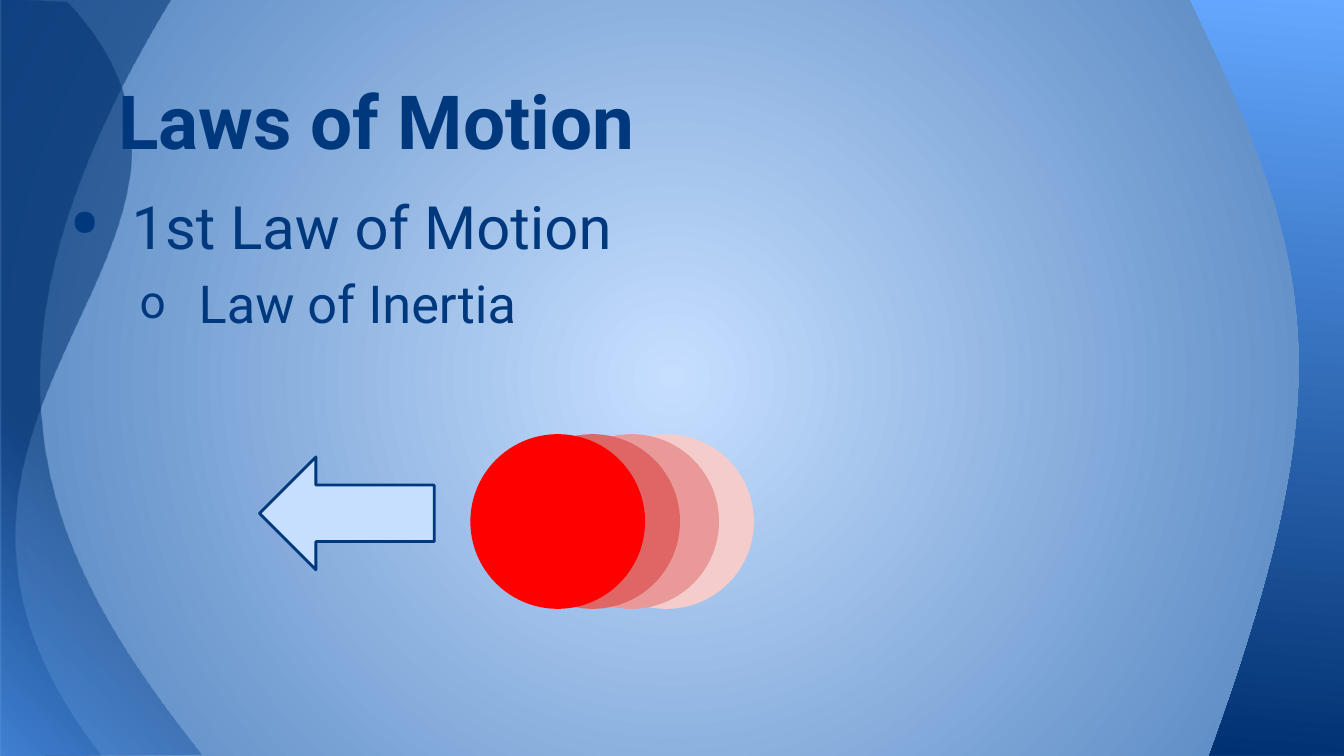
import pptx
import pptx.util
import pptx.dml.color
import pptx.enum.shapes
import pptx.enum.text
import pptx.oxml
import pptx.oxml.ns
from dataclasses import dataclass

Pt = pptx.util.Pt
RGBColor = pptx.dml.color.RGBColor
MSO_SHAPE = pptx.enum.shapes.MSO_SHAPE
qn = pptx.oxml.ns.qn
A = pptx.oxml.ns.nsdecls("a")


@dataclass(frozen=True)
class Theme:
    font: str = "Roboto"
    ink: str = "00387E"
    pale: str = "C6DFFF"
    edge: str = "4F81BD"
    dark: str = "003171"
    bright: str = "549FFF"
    sky: str = "65A8FF"
    balls: tuple = ("F4CCCC", "EA9999", "E06666", "FF0000")
    title_size: int = 40
    body_sizes: tuple = (32, 28)


theme = Theme()


def set_gradient(properties, stops, direction, opacity=100):
    """Replace the solid fill in properties by a gradient."""
    stop_xml = "".join(
        f'<a:gs pos="{position * 1000}"><a:srgbClr val="{color}">'
        f'<a:alpha val="{opacity * 1000}"/></a:srgbClr></a:gs>'
        for position, color in stops)
    gradient = pptx.oxml.parse_xml(
        f'<a:gradFill {A} rotWithShape="1"><a:gsLst>{stop_xml}</a:gsLst>{direction}</a:gradFill>')
    solid = properties.find(qn("a:solidFill"))
    properties.replace(solid, gradient)


def add_text(paragraph, text, size, bold=False):
    run = paragraph.add_run()
    run.text = text
    run.font.name = theme.font
    run.font.size = Pt(size)
    run.font.bold = bold
    run.font.color.rgb = RGBColor.from_string(theme.ink)


presentation = pptx.Presentation()
presentation.slide_width, presentation.slide_height = Pt(720), Pt(405)
slide = presentation.slides.add_slide(presentation.slide_layouts[5])

# Background: glow from the centre
slide.background.fill.solid()
centre = ('<a:path path="circle"><a:fillToRect l="50000" t="50000" '
          'r="50000" b="50000"/></a:path>')
set_gradient(slide.element.find(".//" + qn("p:bgPr")),
             [(0, theme.pale), (100, theme.edge)], centre)

# Curved side bands: outline points, index of the first curve control, fill
corner = '<a:path path="circle"><a:fillToRect t="100000" r="100000"/></a:path>'
shade = [(0, theme.bright), (41, theme.dark), (100, theme.dark)]
bands = [
    ([(108, 404), (-0.7, 404.6), (0, -1.4), (91.4, 0),
      (-27.4, 195.8), (23.8, 297.4), (108, 404)], 4, shade, corner, 54),
    ([(54, 404), (0.7, 404.6), (0.7, 0), (36, 1.4),
      (156.2, 131), (-87.8, 221.8), (54, 404)], 4, shade, corner, 54),
    ([(723.6, 404.6), (648, 404.6), (720.7, 204.5), (706.3, 141.1),
      (637.2, -0.7), (723.6, -0.7)], 2,
     [(0, theme.sky), (100, theme.dark)], '<a:lin ang="5700000" scaled="0"/>', 100),
]
for points, curve_start, stops, direction, opacity in bands:
    points = [(Pt(x), Pt(y)) for x, y in points]
    builder = slide.shapes.build_freeform(*points[0], scale=1.0)
    builder.add_line_segments(points[1:], close=True)
    band = builder.convert_to_shape()
    band.shadow.inherit = False
    band.line.fill.background()
    band.fill.solid()
    set_gradient(band.element.spPr, stops, direction, opacity)
    # Three straight segments become one Bezier curve
    segments = band.element.findall(".//" + qn("a:lnTo"))[curve_start - 1:curve_start + 2]
    curve = pptx.oxml.parse_xml(f"<a:cubicBezTo {A}/>")
    segments[0].addprevious(curve)
    for segment in segments:
        curve.append(segment[0])
        segment.getparent().remove(segment)

# Bulleted text: text, left margin, hanging indent, space before, bullet, bullet size
body = slide.shapes.add_textbox(Pt(27.4), Pt(94.3), Pt(648), Pt(285.8))
body_frame = body.text_frame
items = [
    ("1st Law of Motion", 36, -33.84, 0, "•", 167),
    ("Law of Inertia", 72, -31.68, 5.6, "o", 88),
]
for level, (text, margin, indent, before, bullet, bullet_size) in enumerate(items):
    paragraph = body_frame.add_paragraph() if level else body_frame.paragraphs[0]
    paragraph.level = level
    paragraph.space_before = Pt(before)
    properties = paragraph._p.get_or_add_pPr()
    properties.set("marL", str(Pt(margin)))
    properties.set("indent", str(Pt(indent)))
    for xml in (f'<a:buClr {A}><a:srgbClr val="{theme.ink}"/></a:buClr>',
                f'<a:buSzPct {A} val="{bullet_size * 1000}"/>',
                f'<a:buFont {A} typeface="{theme.font}"/>',
                f'<a:buChar {A} char="{bullet}"/>'):
        properties.append(pptx.oxml.parse_xml(xml))
    add_text(paragraph, text, theme.body_sizes[level])

# Title, raised above the side bands
title = slide.shapes.title
title.left, title.top, title.width, title.height = Pt(36), Pt(16.6), Pt(648), Pt(78.5)
title.element.getparent().append(title.element)
paragraph = title.text_frame.paragraphs[0]
paragraph.alignment = pptx.enum.text.PP_ALIGN.LEFT
paragraph._p.get_or_add_pPr().set("indent", str(Pt(20.16)))
add_text(paragraph, "Laws of Motion", theme.title_size, bold=True)

for frame, anchor in ((body_frame, pptx.enum.text.MSO_ANCHOR.TOP),
                      (title.text_frame, pptx.enum.text.MSO_ANCHOR.BOTTOM)):
    frame.word_wrap = True
    frame.auto_size = pptx.enum.text.MSO_AUTO_SIZE.NONE
    frame.vertical_anchor = anchor
    frame.margin_left = frame.margin_right = Pt(7.2)
    frame.margin_top = frame.margin_bottom = Pt(7.2)

# Moving ball with its fading trail
for left, color in zip((310.3, 291.6, 270.7, 252), theme.balls):
    ball = slide.shapes.add_shape(MSO_SHAPE.OVAL, Pt(left), Pt(232.6), Pt(93.6), Pt(93.6))
    ball.shadow.inherit = False
    ball.fill.solid()
    ball.fill.fore_color.rgb = RGBColor.from_string(color)
    ball.line.fill.background()

# Direction of motion
arrow = slide.shapes.add_shape(MSO_SHAPE.LEFT_ARROW, Pt(139), Pt(244.8), Pt(93.6), Pt(60.5))
arrow.shadow.inherit = False
arrow.fill.solid()
arrow.fill.fore_color.rgb = RGBColor.from_string(theme.pale)
arrow.line.color.rgb = RGBColor.from_string(theme.ink)
arrow.line.width = Pt(1.5)

presentation.save("out.pptx")
